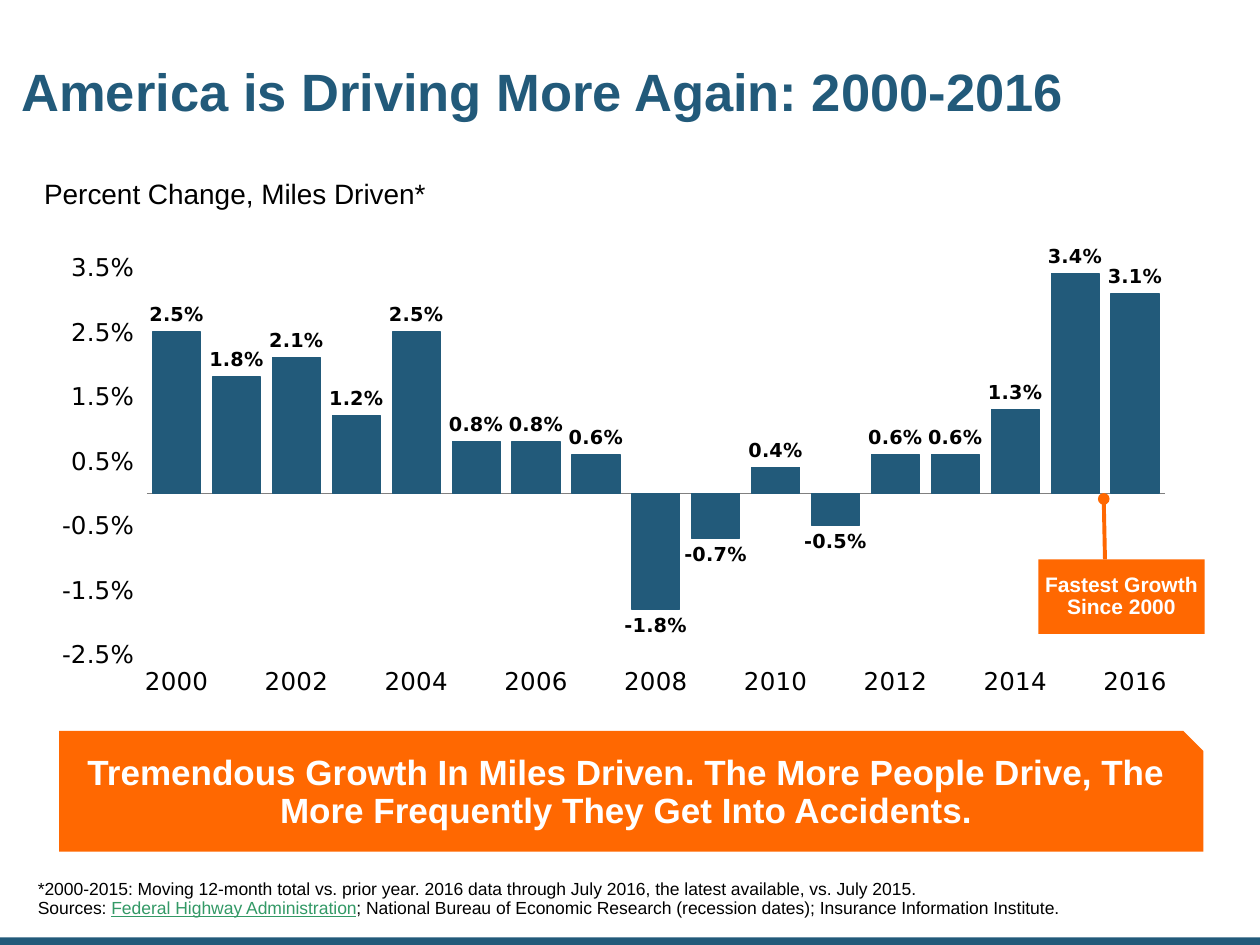
from dataclasses import dataclass

import pptx
import pptx.chart.data
import pptx.dml.color
import pptx.enum.chart
import pptx.enum.shapes
import pptx.enum.text
import pptx.oxml
import pptx.oxml.ns
import pptx.util
from lxml import etree

Inches = pptx.util.Inches
Pt = pptx.util.Pt
RGB = pptx.dml.color.RGBColor
Anchor = pptx.enum.text.MSO_ANCHOR
Align = pptx.enum.text.PP_ALIGN
Shape = pptx.enum.shapes.MSO_SHAPE
qn = pptx.oxml.ns.qn


@dataclass(frozen=True)
class Theme:
    blue: RGB = RGB.from_string("225A7A")
    orange: RGB = RGB.from_string("FF6801")
    green: RGB = RGB.from_string("339966")
    black: RGB = RGB.from_string("000000")
    white: RGB = RGB.from_string("FFFFFF")
    axis: RGB = RGB.from_string("808080")
    font: str = "Arial"
    chart_font: str = "DejaVu Sans"
    title: int = 30
    banner: int = 20
    subtitle: int = 16
    axis_label: int = 14
    callout: int = 12
    data_label: int = 11
    note: int = 10


THEME = Theme()


@dataclass(frozen=True)
class Label:
    """A block of text; box is left, top, width, height in inches."""
    box: tuple
    text: str
    size: int
    color: RGB
    bold: bool = False
    anchor: Anchor = Anchor.MIDDLE
    align: Align = Align.LEFT
    insets: tuple = (0.05, 0.05, 0.05, 0.05)


TITLE = Label((0.12, 0.23, 9.25, 1.04), "America is Driving More Again: 2000-2016",
              THEME.title, THEME.blue, bold=True)
SUBTITLE = Label((0.3, 1.38, 9.25, 0.43), "Percent Change, Miles Driven*",
                 THEME.subtitle, THEME.black, anchor=Anchor.TOP)
NOTE = Label((0.3, 6.84, 8.4, 0.45),
             "*2000-2015: Moving 12-month total vs. prior year. 2016 data through "
             "July 2016, the latest available, vs. July 2015.",
             THEME.note, THEME.black, anchor=Anchor.BOTTOM, insets=(0, 0, 0, 0))
CALLOUT = Label((8.24, 4.44, 1.32, 0.59), "Fastest Growth Since 2000", THEME.callout,
                THEME.white, bold=True, align=Align.CENTER, insets=(0.05, 0, 0.05, 0))
BANNER = Label((0.47, 5.8, 9.08, 0.96),
               "Tremendous Growth In Miles Driven. The More People Drive, The "
               "More Frequently They Get Into Accidents.",
               THEME.banner, THEME.white, bold=True, align=Align.CENTER,
               insets=(0.1, 0.05, 0.1, 0.1))

YEARS = range(2000, 2017)
MILES_CHANGE = (0.025, 0.018, 0.021, 0.012, 0.025, 0.008, 0.008, 0.006, -0.018,
                -0.007, 0.004, -0.005, 0.006, 0.006, 0.013, 0.034, 0.031)


def write(sp, label: Label):
    tf = sp.text_frame
    tf.word_wrap = True
    tf.vertical_anchor = label.anchor
    (tf.margin_left, tf.margin_top,
     tf.margin_right, tf.margin_bottom) = map(Inches, label.insets)
    p = tf.paragraphs[0]
    p.alignment = label.align
    p.line_spacing = 0.9
    p.add_run().text = label.text
    p.font.name = THEME.font
    p.font.size = Pt(label.size)
    p.font.bold = label.bold
    p.font.color.rgb = label.color
    return p


def add_text(shapes, label: Label):
    return write(shapes.add_textbox(*map(Inches, label.box)), label)


def add_block(shapes, kind: Shape, box: tuple, color: RGB):
    sp = shapes.add_shape(kind, *map(Inches, box))
    sp.shadow.inherit = False
    sp.fill.solid()
    sp.fill.fore_color.rgb = color
    sp.line.fill.background()
    return sp


def add_note(shapes) -> None:
    p = add_text(shapes, NOTE)
    p.add_line_break()
    p.add_run().text = "Sources: "
    r = p.add_run()
    r.text = "Federal Highway Administration"
    r.font.underline = True
    r.font.color.rgb = THEME.green
    p.add_run().text = ("; National Bureau of Economic Research (recession dates); "
                        "Insurance Information Institute.")


def add_callout(shapes) -> None:
    group = shapes.add_group_shape().shapes
    write(add_block(group, Shape.RECTANGLE, CALLOUT.box, THEME.orange), CALLOUT)
    line = group.add_connector(pptx.enum.shapes.MSO_CONNECTOR.STRAIGHT,
                               *map(Inches, (8.77, 4.44, 8.76, 3.96)))
    line.line.color.rgb = THEME.orange
    line.line.width = Pt(2.25)
    etree.SubElement(line.line._get_or_add_ln(), qn("a:tailEnd"), type="oval")
    etree.SubElement(line._element.spPr, qn("a:effectLst"))


def set_plot_area(chart, x: float, y: float, w: float, h: float) -> None:
    area = chart._chartSpace.chart.plotArea
    for old in area.findall(qn("c:layout")):
        area.remove(old)
    layout = etree.Element(qn("c:layout"))
    manual = etree.SubElement(layout, qn("c:manualLayout"))
    settings = dict(layoutTarget="inner", xMode="edge", yMode="edge", x=x, y=y, w=w, h=h)
    for name, value in settings.items():
        etree.SubElement(manual, qn(f"c:{name}"), val=str(value))
    area.insert(0, layout)


def add_miles_chart(shapes) -> None:
    xl = pptx.enum.chart
    data = pptx.chart.data.CategoryChartData(number_format="0.0%")
    data.categories = [str(y) if y % 2 == 0 else "" for y in YEARS]
    data.add_series("Series 1", MILES_CHANGE)
    chart = shapes.add_chart(xl.XL_CHART_TYPE.COLUMN_CLUSTERED,
                             *map(Inches, (0.38, 1.61, 9.03, 4.28)), data).chart
    chart.has_legend = False
    chart.has_title = False
    chart.font.name = THEME.chart_font
    chart.font.size = Pt(THEME.axis_label)
    chart.font.color.rgb = THEME.black
    set_plot_area(chart, 0.087, 0.06, 0.895, 0.778)

    years, change = chart.category_axis, chart.value_axis
    for axis in (years, change):
        axis.tick_label_position = xl.XL_TICK_LABEL_POSITION.LOW
        axis.has_major_gridlines = False
    years.major_tick_mark = xl.XL_TICK_MARK.NONE
    years.format.line.color.rgb = THEME.axis
    years.format.line.width = Pt(0.75)
    change.minimum_scale, change.maximum_scale = -0.025, 0.04
    change.major_unit = 0.01
    change.format.line.fill.background()
    change.tick_labels.number_format = "0.0%"
    change.tick_labels.number_format_is_linked = False

    plot = chart.plots[0]
    plot.gap_width = 25
    plot.vary_by_categories = False
    bars = plot.series[0]
    bars.invert_if_negative = False
    bars.format.fill.solid()
    bars.format.fill.fore_color.rgb = THEME.blue
    bars.format.line.color.rgb = THEME.blue
    bars.format.line.width = Pt(0.75)
    labels = bars.data_labels
    labels.show_value = True
    labels.position = xl.XL_LABEL_POSITION.OUTSIDE_END
    labels.number_format = "0.0%"
    labels.number_format_is_linked = False
    labels.font.name = THEME.chart_font
    labels.font.size = Pt(THEME.data_label)
    labels.font.bold = True
    labels.font.color.rgb = THEME.black


def main() -> None:
    prs = pptx.Presentation()
    prs.slide_width, prs.slide_height = Inches(10), Inches(7.5)
    s = prs.slides.add_slide(prs.slide_layouts[6])
    add_block(s.shapes, Shape.RECTANGLE, (0, 7.44, 10, 0.06), THEME.blue)
    add_text(s.shapes, TITLE)
    add_text(s.shapes, SUBTITLE)
    add_note(s.shapes)
    add_miles_chart(s.shapes)
    add_callout(s.shapes)
    write(add_block(s.shapes, Shape.SNIP_1_RECTANGLE, BANNER.box, THEME.orange), BANNER)
    prs.save("out.pptx")


if __name__ == "__main__":
    main()
